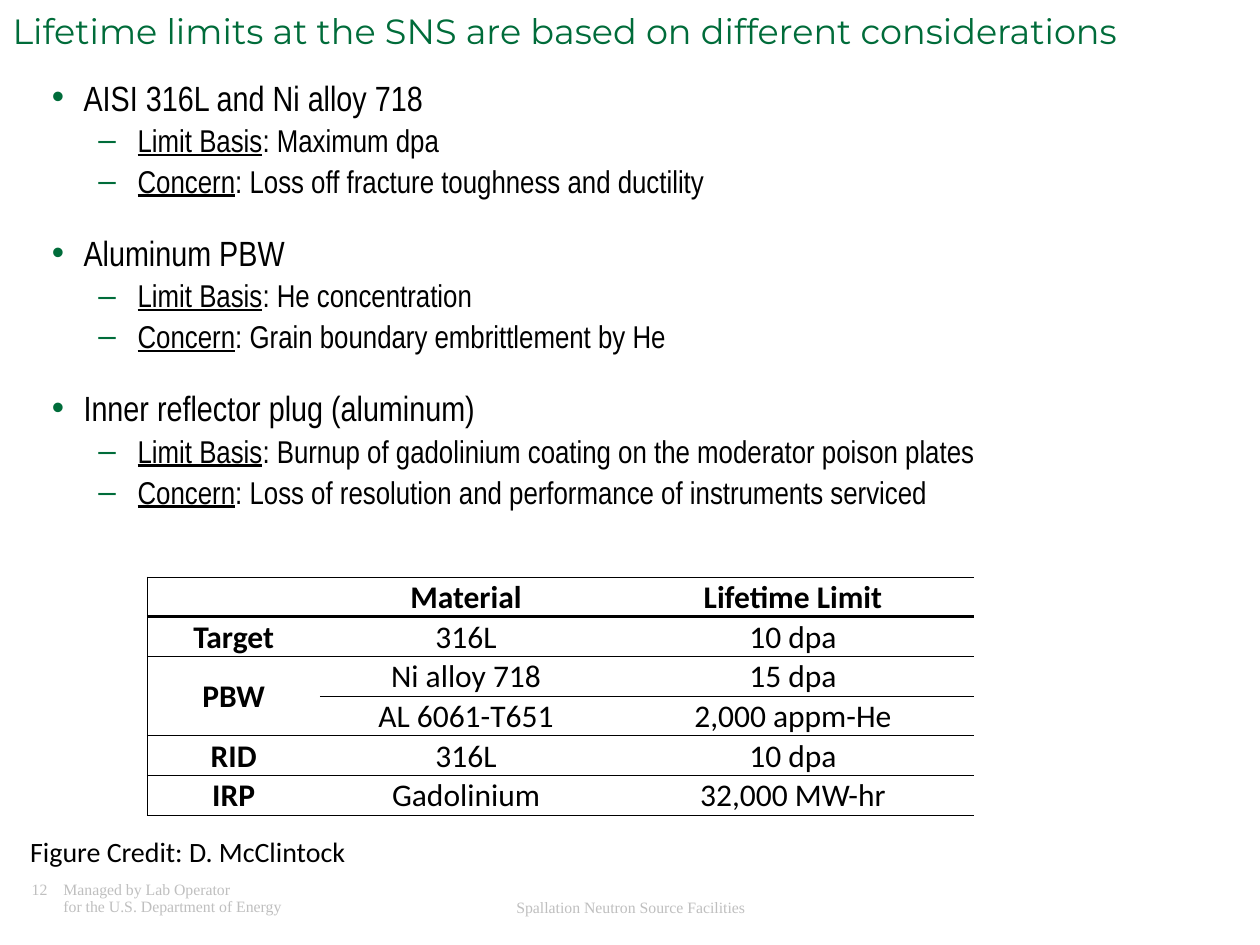
from lxml.etree import SubElement
from pptx import Presentation
from pptx.dml.color import RGBColor
from pptx.enum.text import MSO_ANCHOR as Anchor, MSO_AUTO_SIZE as AutoSize, PP_ALIGN as Align
from pptx.oxml.ns import qn
from pptx.util import Cm, Pt

GREEN, BLACK, GRAY = "006C3A", "000000", "BFBFBF"


def color(value):
    return RGBColor.from_string(value)


class SlideBuilder:
    bullet_levels = [("•", 0.64, 0.64, 20), ("–", 1.73, 0.79, 18)]

    def __init__(self, slide):
        self.slide = slide

    def place(self, shape, left, top, width, height):
        shape.left, shape.top = Cm(left), Cm(top)
        shape.width, shape.height = Cm(width), Cm(height)

    def run(self, paragraph, text, size, font, fill=BLACK, bold=False, underline=False):
        run = paragraph.add_run()
        run.text = text
        run.font.size = Pt(size)
        run.font.name = font
        run.font.color.rgb = color(fill)
        run.font.bold = bold
        run.font.underline = underline

    def title(self, text, *box):
        shape = self.slide.shapes.title
        self.place(shape, *box)
        frame = shape.text_frame
        frame.auto_size = AutoSize.NONE
        frame.vertical_anchor = Anchor.TOP
        paragraph = frame.paragraphs[0]
        paragraph.alignment = Align.LEFT
        paragraph.line_spacing = 0.85
        self.run(paragraph, text, 20, "Montserrat", GREEN)

    def bullet(self, paragraph, level, runs, space_before):
        mark, margin, hanging, size = self.bullet_levels[level]
        paragraph.level = level
        paragraph.line_spacing = 0.8
        paragraph.space_before = Pt(space_before)
        properties = paragraph._p.get_or_add_pPr()
        properties.set("marL", str(Cm(margin)))
        properties.set("indent", str(-Cm(hanging)))
        bullet_color = SubElement(properties, qn("a:buClr"))
        SubElement(bullet_color, qn("a:srgbClr"), val=GREEN)
        SubElement(properties, qn("a:buFont"), typeface="Arial")
        SubElement(properties, qn("a:buChar"), char=mark)
        for text, underline in runs:
            self.run(paragraph, text, size, "Arial Narrow", underline=underline)

    def body(self, groups, *box):
        shape = self.slide.placeholders[1]
        self.place(shape, *box)
        frame = shape.text_frame
        frame.auto_size = AutoSize.NONE
        for index, (heading, basis, concern) in enumerate(groups):
            paragraph = frame.add_paragraph() if index else frame.paragraphs[0]
            self.bullet(paragraph, 0, [(heading, False)], 23 if index else 0)
            for label, detail in (("Limit Basis", basis), ("Concern", concern)):
                runs = [(label, True), (f": {detail}", False)]
                self.bullet(frame.add_paragraph(), 1, runs, 6)

    def text_box(self, lines, size, font, fill, *box, align=Align.LEFT, inset=None, tab=None, spacing=None):
        shape = self.slide.shapes.add_textbox(*map(Cm, box))
        frame = shape.text_frame
        frame.word_wrap = True
        if inset is not None:
            frame.margin_left = frame.margin_top = Cm(inset)
            frame.margin_right = frame.margin_bottom = Cm(inset)
        paragraph = frame.paragraphs[0]
        paragraph.alignment = align
        if spacing:
            paragraph.line_spacing = spacing
        if tab:
            tabs = SubElement(paragraph._p.get_or_add_pPr(), qn("a:tabLst"))
            SubElement(tabs, qn("a:tab"), pos=str(Cm(tab)), algn="l")
        for index, line in enumerate(lines):
            if index:
                paragraph.add_line_break()
            self.run(paragraph, line, size, font, fill)

    def border(self, cell, side, width):
        properties = cell._tc.get_or_add_tcPr()
        line = SubElement(properties, qn(f"a:ln{side}"), w=str(Pt(width)))
        if width:
            solid = SubElement(line, qn("a:solidFill"))
            SubElement(solid, qn("a:srgbClr"), val=BLACK)
        else:
            SubElement(line, qn("a:noFill"))

    def table(self, rows, widths, row_height, merged, *corner):
        frame = self.slide.shapes.add_table(
            len(rows), len(widths), *map(Cm, corner), Cm(sum(widths)), Cm(row_height * len(rows)))
        table = frame.table
        table.first_row = table.horz_banding = False
        for column, width in zip(table.columns, widths):
            column.width = Cm(width)
        for row in table.rows:
            row.height = Cm(row_height)
        first, last = merged
        table.cell(*first).merge(table.cell(*last))
        for r, values in enumerate(rows):
            for c, text in enumerate(values):
                cell = table.cell(r, c)
                self.border(cell, "L", 0 if c else 0.5)
                self.border(cell, "R", 0)
                self.border(cell, "T", 0 if cell.is_spanned else 2 if r == 1 else 0.5)
                self.border(cell, "B", 0.5 if r else 2)
                cell.fill.background()
                cell.vertical_anchor = Anchor.MIDDLE
                cell.margin_left = cell.margin_right = cell.margin_top = Cm(0.03)
                cell.margin_bottom = 0
                if text:
                    paragraph = cell.text_frame.paragraphs[0]
                    paragraph.alignment = Align.CENTER
                    self.run(paragraph, text, 18, "Calibri", bold=r == 0 or c == 0)


def main():
    presentation = Presentation()
    presentation.slide_width, presentation.slide_height = Cm(25.4), Cm(19.05)
    slide = presentation.slides.add_slide(presentation.slide_layouts[1])
    builder = SlideBuilder(slide)

    builder.text_box(["12\tManaged by Lab Operator", "\tfor the U.S. Department of Energy"],
                     9, "Times New Roman", GRAY, 0.64, 17.78, 7.82, 0.84,
                     inset=0, tab=0.64, spacing=0.9)
    builder.text_box(["Spallation Neutron Source Facilities"], 9, "Times New Roman", GRAY,
                     8.69, 17.98, 8.05, 0.51, align=Align.CENTER)
    builder.title("Lifetime limits at the SNS are based on different considerations",
                  0, 0.2, 25.4, 1.02)
    builder.body([
        ("AISI 316L and Ni alloy 718", "Maximum dpa",
         "Loss off fracture toughness and ductility"),
        ("Aluminum PBW", "He concentration", "Grain boundary embrittlement by He"),
        ("Inner reflector plug (aluminum)",
         "Burnup of gadolinium coating on the moderator poison plates",
         "Loss of resolution and performance of instruments serviced"),
    ], 0.79, 1.57, 24.26, 9.02)
    builder.table([
        ("", "Material", "Lifetime Limit"),
        ("Target", "316L", "10 dpa"),
        ("PBW", "Ni alloy 718", "15 dpa"),
        ("", "AL 6061-T651", "2,000 appm-He"),
        ("RID", "316L", "10 dpa"),
        ("IRP", "Gadolinium", "32,000 MW-hr"),
    ], [3.48, 5.89, 7.29], 0.8, ((2, 0), (3, 0)), 2.97, 11.63)
    builder.text_box(["Figure Credit: D. McClintock"], 16, "Calibri", BLACK,
                     0.36, 16.69, 9.96, 0.94)
    presentation.save("out.pptx")


if __name__ == "__main__":
    main()
